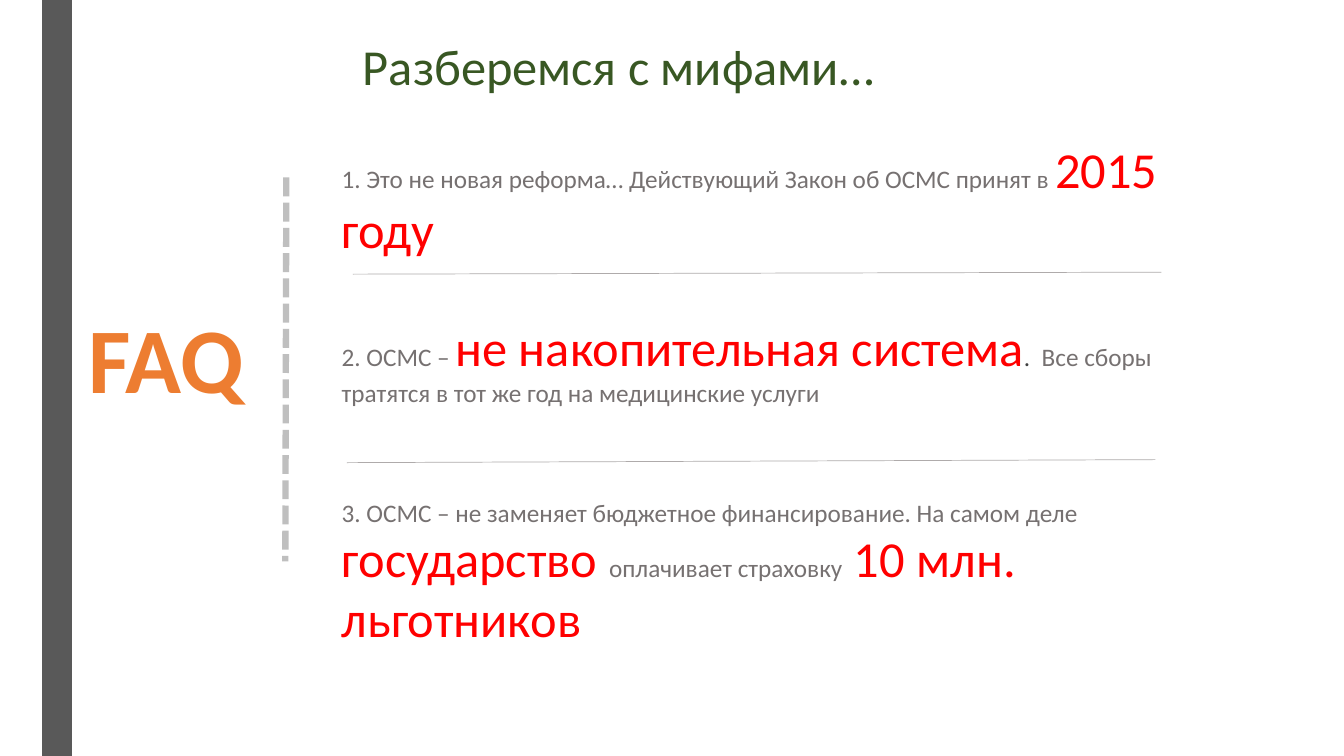
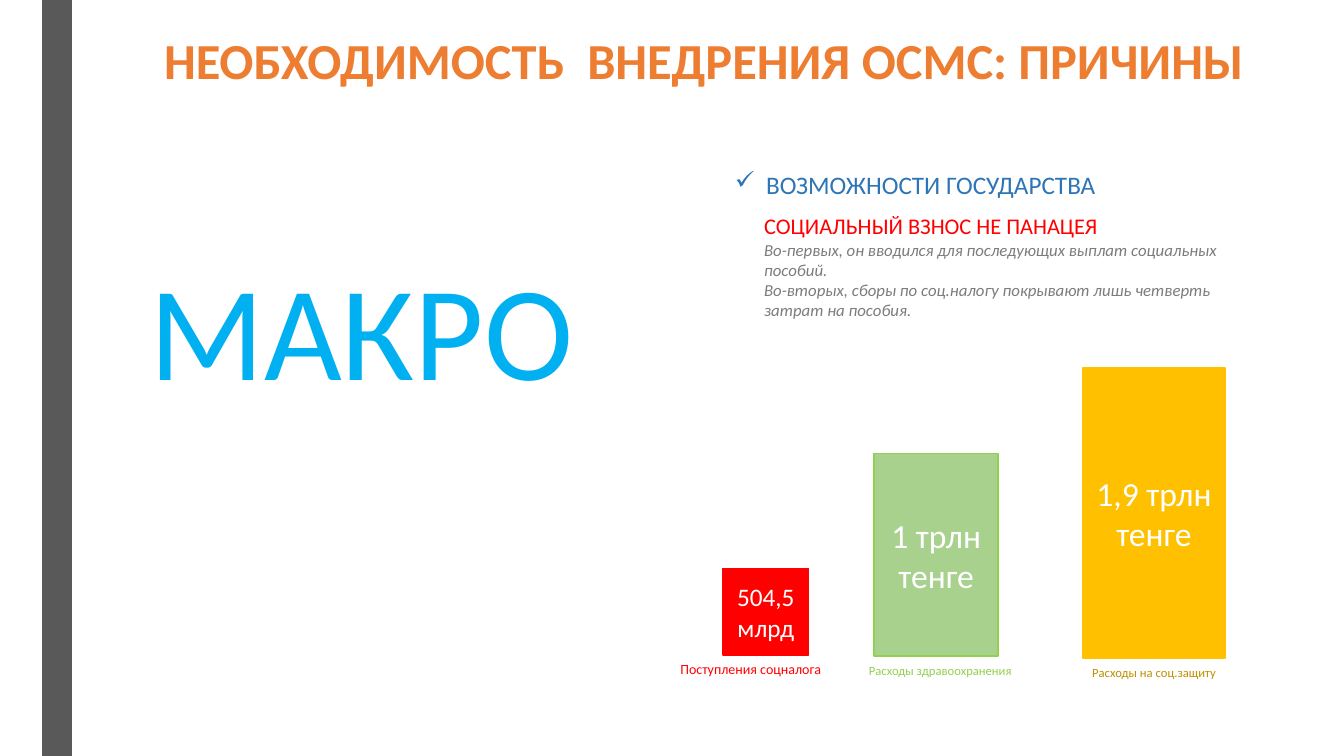
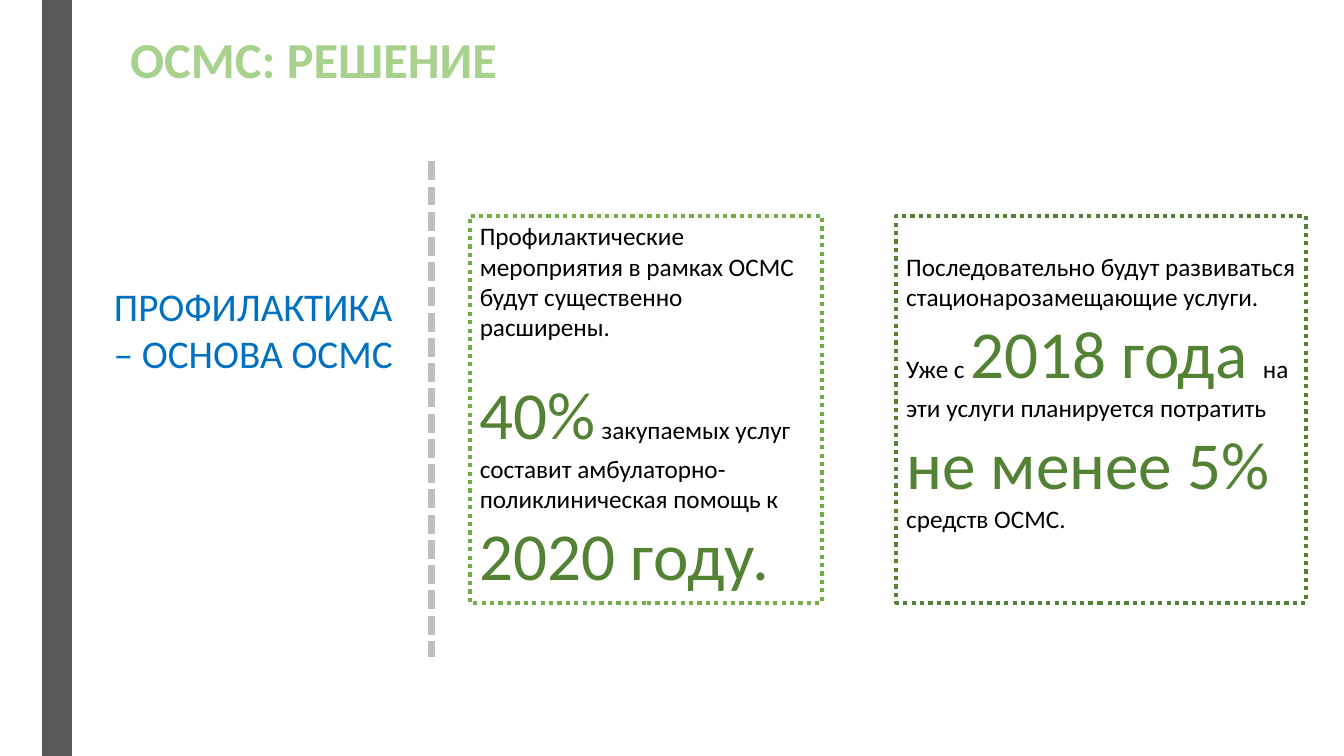
import pptx
import pptx.util
import pptx.dml.color
import pptx.enum.dml
import pptx.enum.shapes
import pptx.enum.text
from lxml import etree
from pptx.oxml.ns import qn

Inches, Pt = pptx.util.Inches, pptx.util.Pt
ALIGN, ANCHOR = pptx.enum.text.PP_ALIGN, pptx.enum.text.MSO_ANCHOR
DASH = pptx.enum.dml.MSO_LINE
RECT = pptx.enum.shapes.MSO_SHAPE.RECTANGLE

COLORS = {
    "band": "595959", "dash": "BFBFBF", "rule": "AFABAB", "orange": "ED7D31",
    "dark_green": "385723", "mid_green": "548235", "green": "70AD47",
    "pale_green": "A9D18E", "lime": "92D050", "red": "FF0000",
    "amber": "FFC000", "ochre": "BF9000", "sky": "00B0F0", "blue": "0070C0",
    "steel": "2E75B6", "gray": "767171", "light_gray": "7C7C7C",
    "dark_gray": "404040", "black": "000000", "white": "FFFFFF",
}

# Slide 1: each answer is (top, height, width, runs); a run is (text, size, color)
PLAIN, HOT = (18, "gray"), (36, "red")
ANSWERS = [
    (1.32, 1.31, 9.29, [
        ("1. Это не новая реформа… Действующий Закон об ОСМС принят в ", *PLAIN),
        ("2015 году", *HOT)]),
    (3.09, 1.01, 8.62, [
        ("2. ОСМС – ", *PLAIN),
        ("не накопительная система", *HOT),
        (".  ", 18, "dark_gray"),
        ("Все сборы тратятся в тот же год на медицинские услуги", *PLAIN)]),
    (4.88, 1.62, 8.62, [
        ("3. ОСМС – не заменяет бюджетное финансирование. На самом деле ", *PLAIN),
        ("государство ", *HOT),
        ("оплачивает страховку  ", *PLAIN),
        ("10 млн. льготников", *HOT)]),
]
RULES = [(3.5, 2.72, 11.52, 2.7), (3.44, 4.59, 11.46, 4.56)]

# Slide 2: explanation, then bars with captions
ITALIC = {"italic": True}
REASONS = [
    [("СОЦИАЛЬНЫЙ ВЗНОС НЕ ПАНАЦЕЯ", 16, "red")],
    [("Во-первых, он вводился для последующих выплат социальных пособий.",
      12, "light_gray", ITALIC)],
    [("Во-вторых, сборы по соц.налогу покрывают лишь четверть затрат на пособия.",
      12, "light_gray", ITALIC)],
]
# (box, fill, line, value, value size)
BARS = [
    ((7.17, 5.64, 0.85, 0.86), "red", "red", "504,5 млрд", 18),
    ((8.67, 4.5, 1.23, 2.01), "pale_green", "lime", "1 трлн тенге", 24),
    ((10.74, 3.65, 1.41, 2.88), "amber", "amber", "1,9 трлн тенге", 24),
]
# (box, text, size, color, alignment)
CAPTIONS = [
    ((6.39, 6.5, 2.11, 0.27), "Поступления соцналога", 10, "red", ALIGN.CENTER),
    ((8.52, 6.53, 2.13, 0.25), "Расходы здравоохранения", 9, "lime", ALIGN.LEFT),
    ((10.38, 6.55, 2.13, 0.25), "Расходы на соц.защиту", 9, "ochre", ALIGN.CENTER),
]

# Slide 3: (left, width, top inset, outline, paragraphs)
BODY, BIG = (18, "black"), (48, "mid_green")
LINE_GAP = 22  # points, one line of body text
MEASURES = [
    (4.66, 3.49, 0.05, "green", [
        [("Профилактические мероприятия в рамках ОСМС будут существенно расширены.",
          *BODY)],
        [("40%", *BIG),
         (" закупаемых услуг составит амбулаторно-поликлиническая помощь к ", *BODY),
         ("2020 году.", *BIG)]]),
    (8.89, 4.06, 0.35, "mid_green", [
        [("Последовательно будут развиваться стационарозамещающие услуги.", *BODY)],
        [("Уже с ", *BODY), ("2018 года ", *BIG),
         ("на эти услуги планируется потратить ", *BODY),
         ("не менее 5% ", *BIG), ("средств ОСМС.", *BODY)]]),
]


def rgb(name):
    return pptx.dml.color.RGBColor.from_string(COLORS[name])


def set_line(line, color, width, dash=None):
    line.color.rgb = rgb(color)
    line.width = Pt(width)
    if dash:
        line.dash_style = dash


def write(shape, paragraphs, align=ALIGN.LEFT, anchor=ANCHOR.TOP):
    """Fill a shape with paragraphs, each a list of runs."""
    tf = shape.text_frame
    frame = {"word_wrap": True, "vertical_anchor": anchor,
             "auto_size": pptx.enum.text.MSO_AUTO_SIZE.NONE}
    for name, value in frame.items():
        setattr(tf, name, value)
    for i, runs in enumerate(paragraphs):
        p = tf.add_paragraph() if i else tf.paragraphs[0]
        p.alignment = align
        for text, size, color, *extra in runs:
            r = p.add_run()
            r.text = text
            font = {"name": "Calibri", "size": Pt(size), **(extra[0] if extra else {})}
            for name, value in font.items():
                setattr(r.font, name, value)
            r.font.color.rgb = rgb(color)
    return tf


def add_text(s, box, paragraphs, align=ALIGN.LEFT):
    sp = s.shapes.add_textbox(*map(Inches, box))
    write(sp, paragraphs, align)
    return sp


def add_rect(s, box, fill, line):
    sp = s.shapes.add_shape(RECT, *map(Inches, box))
    sp.shadow.inherit = False
    sp.fill.solid()
    sp.fill.fore_color.rgb = rgb(fill)
    set_line(sp.line, line, 1)
    return sp


def add_line(s, ends, color, width, dash=None):
    cxn = s.shapes.add_connector(pptx.enum.shapes.MSO_CONNECTOR.STRAIGHT,
                                 *map(Inches, ends))
    set_line(cxn.line, color, width, dash)
    etree.SubElement(cxn.element.spPr, qn("a:effectLst"))


def add_divider(s, ends):
    add_line(s, ends, "dash", 4.5, DASH.SQUARE_DOT)


def add_slide(prs, box, text, color, bold=False, align=ALIGN.LEFT):
    """New slide with the side band and its title."""
    s = prs.slides.add_slide(prs.slide_layouts[5])
    add_rect(s, (0.42, 0, 0.29, 7.5), "band", "band")
    title = s.shapes.title
    for name, value in zip(("left", "top", "width", "height"), box):
        setattr(title, name, Inches(value))
    write(title, [[(text, 36, color, {"bold": bold})]], align)
    return s


def add_check(p):
    pPr = p._p.get_or_add_pPr()
    pPr.set("marL", str(Inches(0.31)))
    pPr.set("indent", str(-Inches(0.31)))
    etree.SubElement(pPr, qn("a:buChar")).set("char", "✓")


def build_myths(prs):
    s = add_slide(prs, (3.5, 0.3, 7.89, 0.71), "Разберемся с мифами…", "dark_green")
    add_text(s, (0, 2.94, 3.5, 1.21),
             [[("FAQ ", 66, "orange", {"bold": True})]], ALIGN.CENTER)
    add_divider(s, (2.84, 1.76, 2.83, 5.57))
    for top, height, width, runs in ANSWERS:
        add_text(s, (3.29, top, width, height), [runs])
    for ends in RULES:
        add_line(s, ends, "rule", 0.5)


def build_reasons(prs):
    s = add_slide(prs, (1.3, 0.24, 11.48, 0.71),
                  "НЕОБХОДИМОСТЬ  ВНЕДРЕНИЯ ОСМС: ПРИЧИНЫ ", "orange", True, ALIGN.CENTER)
    add_text(s, (1.3, 2.39, 4.57, 1.72), [[("МАКРО ", 96, "sky")]], ALIGN.CENTER)
    heading = add_text(s, (7.19, 1.63, 3.81, 0.4),
                       [[("ВОЗМОЖНОСТИ ГОСУДАРСТВА", 18, "steel")]])
    add_check(heading.text_frame.paragraphs[0])
    add_text(s, (7.48, 2.06, 4.84, 1.45), REASONS)
    for box, fill, line, value, size in BARS:
        write(add_rect(s, box, fill, line), [[(value, size, "white")]],
              ALIGN.CENTER, ANCHOR.MIDDLE)
    for box, text, size, color, align in CAPTIONS:
        add_text(s, box, [[(text, size, color)]], align)


def build_solution(prs):
    s = add_slide(prs, (1.19, 0.23, 11.48, 0.71), "ОСМС: РЕШЕНИЕ", "pale_green", True)
    add_divider(s, (4.28, 1.6, 4.28, 6.52))
    add_text(s, (0.97, 2.75, 3.08, 1.04),
             [[("ПРОФИЛАКТИКА – ОСНОВА ОСМС", 28, "blue")]], ALIGN.CENTER)
    for left, width, inset, outline, paragraphs in MEASURES:
        sp = add_text(s, (left, 2.14, width, 3.84), paragraphs)
        sp.text_frame.margin_top = Inches(inset)
        set_line(sp.line, outline, 3, DASH.ROUND_DOT)
        if outline == "green":
            sp.text_frame.paragraphs[1].space_before = Pt(LINE_GAP)


def main():
    prs = pptx.Presentation()
    prs.slide_width, prs.slide_height = Inches(13.33), Inches(7.5)
    for build in (build_myths, build_reasons, build_solution):
        build(prs)
    prs.save("out.pptx")


if __name__ == "__main__":
    main()
